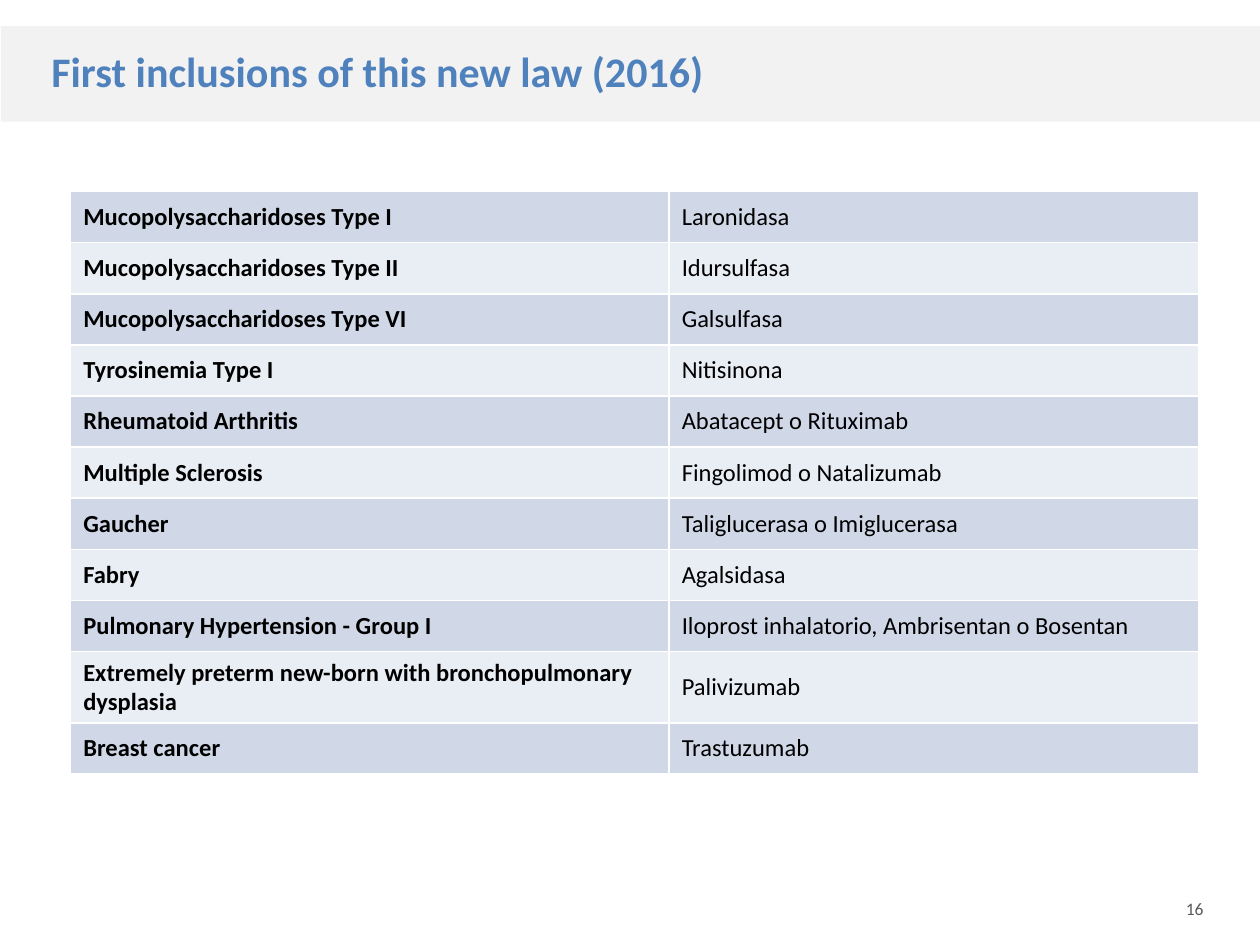
import pptx
import pptx.dml.color
import pptx.enum.shapes
import pptx.enum.text
import pptx.oxml
import pptx.oxml.ns
import pptx.util
from dataclasses import dataclass

Pt = pptx.util.Pt
ALIGN = pptx.enum.text.PP_ALIGN
ANCHOR = pptx.enum.text.MSO_ANCHOR


@dataclass(frozen=True)
class Theme:
    font: str = "Calibri"
    title_size: int = 24
    table_size: int = 14
    number_size: int = 10
    title: str = "4F81BD"
    band: str = "F2F2F2"
    ink: str = "000000"
    number: str = "595959"
    border: str = "FFFFFF"
    rows: tuple = ("D0D8E8", "E9EDF4")


THEME = Theme()
ROW_HEIGHT = 29.2
COLUMN_WIDTHS = (342, 302.4)

TREATMENTS = [
    ("Mucopolysaccharidoses Type I", "Laronidasa"),
    ("Mucopolysaccharidoses Type II", "Idursulfasa"),
    ("Mucopolysaccharidoses Type VI", "Galsulfasa"),
    ("Tyrosinemia Type I", "Nitisinona"),
    ("Rheumatoid Arthritis", "Abatacept o Rituximab"),
    ("Multiple Sclerosis", "Fingolimod o Natalizumab"),
    ("Gaucher", "Taliglucerasa o Imiglucerasa"),
    ("Fabry", "Agalsidasa"),
    ("Pulmonary Hypertension - Group I", "Iloprost inhalatorio, Ambrisentan o Bosentan"),
    ("Extremely preterm new-born with bronchopulmonary\ndysplasia", "Palivizumab"),
    ("Breast cancer", "Trastuzumab"),
]


def rgb(value):
    return pptx.dml.color.RGBColor.from_string(value)


def write_text(frame, text, *, size, color, bold=False, align=ALIGN.LEFT):
    """Fill a text frame, one paragraph for each line of text."""
    for index, line in enumerate(text.split("\n")):
        para = frame.paragraphs[0] if index == 0 else frame.add_paragraph()
        para.alignment = align
        span = para.add_run()
        span.text = line
        span.font.name = THEME.font
        span.font.size = Pt(size)
        span.font.bold = bold
        span.font.color.rgb = rgb(color)


def add_text_box(page, left, top, width, height, text, wrap=True, **style):
    box = page.shapes.add_textbox(Pt(left), Pt(top), Pt(width), Pt(height))
    box.text_frame.word_wrap = wrap
    write_text(box.text_frame, text, **style)


def add_title_band(page):
    band = page.shapes.add_shape(
        pptx.enum.shapes.MSO_SHAPE.RECTANGLE, Pt(0.5), Pt(15), Pt(720), Pt(54.5))
    band.shadow.inherit = False
    band.fill.solid()
    band.fill.fore_color.rgb = rgb(THEME.band)
    band.line.fill.background()


def set_borders(cell, color, width):
    properties = cell._tc.get_or_add_tcPr()
    for index, side in enumerate(("lnL", "lnR", "lnT", "lnB")):
        line = pptx.oxml.parse_xml(
            f'<a:{side} {pptx.oxml.ns.nsdecls("a")} w="{Pt(width)}">'
            f'<a:solidFill><a:srgbClr val="{color}"/></a:solidFill></a:{side}>')
        properties.insert(index, line)


def add_treatment_table(page):
    table = page.shapes.add_table(
        len(TREATMENTS), len(COLUMN_WIDTHS), Pt(40.4), Pt(109.5),
        Pt(sum(COLUMN_WIDTHS)), Pt(ROW_HEIGHT * len(TREATMENTS))).table
    table.first_row = False
    table.first_col = True
    for column, width in zip(table.columns, COLUMN_WIDTHS):
        column.width = Pt(width)
    for row_index, texts in enumerate(TREATMENTS):
        table.rows[row_index].height = Pt(ROW_HEIGHT)
        for column_index, text in enumerate(texts):
            cell = table.cell(row_index, column_index)
            cell.vertical_anchor = ANCHOR.MIDDLE
            cell.fill.solid()
            cell.fill.fore_color.rgb = rgb(THEME.rows[row_index % 2])
            set_borders(cell, THEME.border, 1)
            write_text(cell.text_frame, text, size=THEME.table_size,
                       color=THEME.ink, bold=column_index == 0)


def main():
    deck = pptx.Presentation()
    deck.slide_width, deck.slide_height = Pt(720), Pt(540)
    page = deck.slides.add_slide(deck.slide_layouts[6])
    add_text_box(page, 662.4, 509.8, 32.4, 19.4, "16", wrap=False,
                 size=THEME.number_size, color=THEME.number, align=ALIGN.RIGHT)
    add_title_band(page)
    add_text_box(page, 22.3, 22.3, 505.4, 37.4, "First inclusions of this new law (2016)",
                 size=THEME.title_size, color=THEME.title, bold=True)
    add_treatment_table(page)
    deck.save("out.pptx")


if __name__ == "__main__":
    main()
